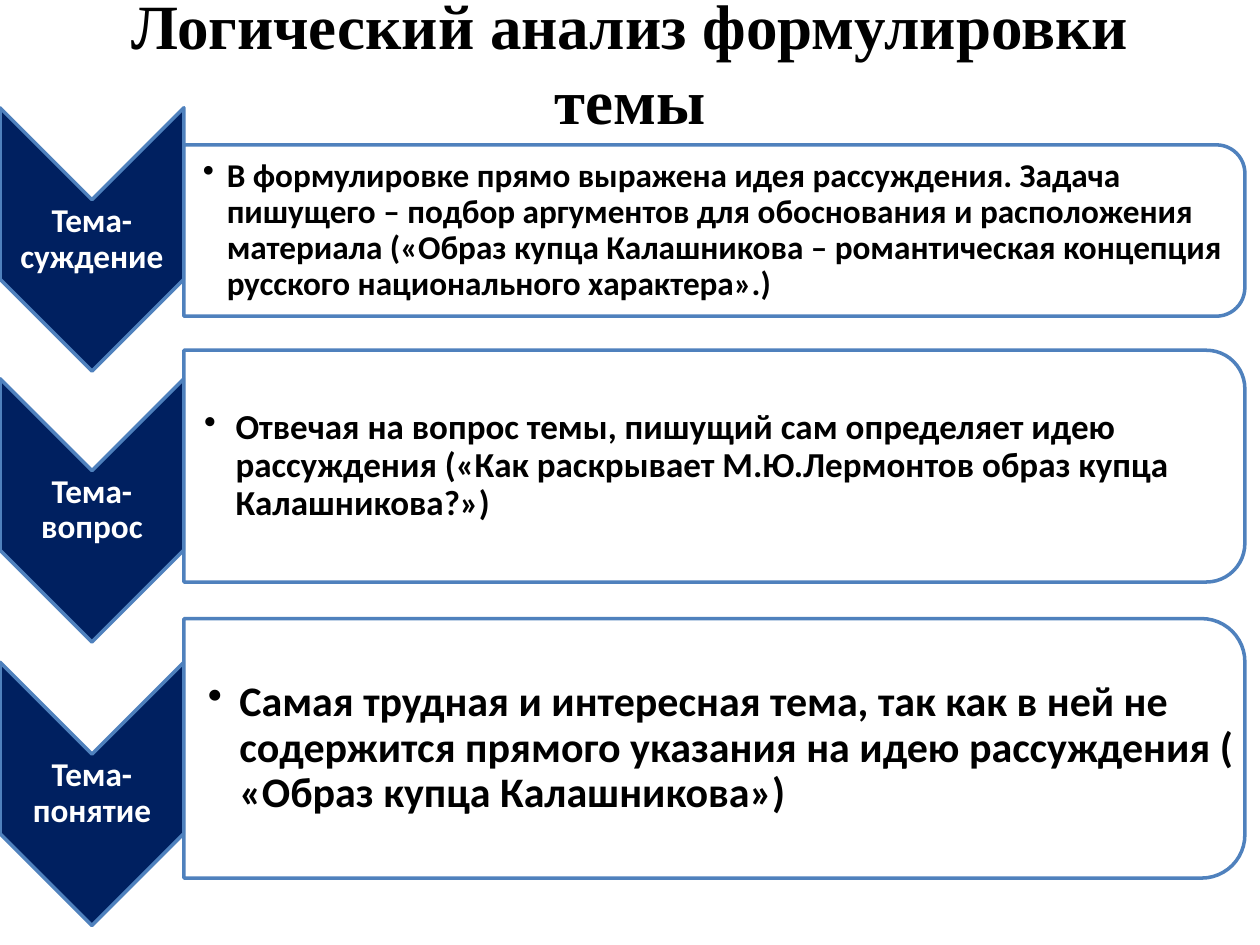
from lxml import etree
from pptx import Presentation
from pptx import util as u
from pptx.dml.color import RGBColor
from pptx.enum import shapes, text
from pptx.oxml.ns import qn

# Content: centres and sizes are in inches
TITLE = "Логический анализ формулировки темы"
TOPICS = [
    dict(label="Тема-суждение", chevron_y=1.9, panel_y=1.83, height=1.36, size=19,
         inset=0.15, hang=0.19,
         body="В формулировке прямо выражена идея рассуждения. Задача пишущего – подбор "
              "аргументов для обоснования и расположения материала («Образ купца "
              "Калашникова – романтическая концепция русского национального характера».)"),
    dict(label="Тема-вопрос", chevron_y=4.05, panel_y=3.7, height=1.84, size=20,
         inset=0.16, hang=0.25,
         body="Отвечая на вопрос темы, пишущий сам определяет идею рассуждения "
              "(«Как раскрывает М.Ю.Лермонтов образ купца Калашникова?»)"),
    dict(label="Тема-понятие", chevron_y=6.3, panel_y=5.94, height=2.06, size=24,
         inset=0.19, hang=0.25,
         body="Самая трудная и интересная тема, так как в ней не содержится прямого "
              "указания на идею рассуждения ( «Образ купца Калашникова»)"),
]
THEME = dict(navy="002060", blue="4F81BD", white="FFFFFF", black="000000",
             title_font="Times New Roman", body_font="Calibri",
             title_size=36, label_size=19, line=2, panel_opacity=90)

# Two columns: chevrons on the left, panels on the right
WIDTH, HEIGHT = 10, 7.5
COLUMN, PANEL_WIDTH = 1.46, 8.42
CHEVRON_LENGTH, LABEL_HEIGHT = 2.09, 0.63

presentation = Presentation()
presentation.slide_width, presentation.slide_height = u.Inches(WIDTH), u.Inches(HEIGHT)
slide = presentation.slides.add_slide(presentation.slide_layouts[6])


def add_text(content, left, center_y, width, height, size, color, font=THEME["body_font"],
             align=text.PP_ALIGN.CENTER, insets=(0.01,) * 4, spacing=0.9, hang=0):
    box = slide.shapes.add_textbox(*map(u.Inches, (left, center_y - height / 2, width, height)))
    frame = box.text_frame
    frame.word_wrap = True
    frame.vertical_anchor = text.MSO_ANCHOR.MIDDLE
    (frame.margin_left, frame.margin_top,
     frame.margin_right, frame.margin_bottom) = map(u.Inches, insets)
    paragraph = frame.paragraphs[0]
    paragraph.alignment, paragraph.line_spacing = align, spacing
    if hang:
        properties = paragraph._p.get_or_add_pPr()
        properties.set("marL", str(u.Inches(hang)))
        properties.set("indent", str(-u.Inches(hang)))
        etree.SubElement(properties, qn("a:buChar")).set("char", "•")
    run = paragraph.add_run()
    run.text = content
    run.font.name, run.font.size, run.font.bold = font, u.Pt(size), True
    run.font.color.rgb = RGBColor.from_string(color)


def add_turned(kind, left, center_y, width, height, fill, opacity=100):
    """Place a shape turned by 90 degrees so that it covers the given area."""
    center_x = left + width / 2
    shape = slide.shapes.add_shape(kind, *map(u.Inches, (
        center_x - height / 2, center_y - width / 2, height, width)))
    shape.rotation = 90
    shape.shadow.inherit = False
    shape.fill.solid()
    shape.fill.fore_color.rgb = RGBColor.from_string(fill)
    if opacity < 100:
        color = shape.fill._xPr.find(".//" + qn("a:srgbClr"))
        etree.SubElement(color, qn("a:alpha")).set("val", str(opacity * 1000))
    shape.line.color.rgb = RGBColor.from_string(THEME["blue"])
    shape.line.width = u.Pt(THEME["line"])


# Title
add_text(TITLE, WIDTH * 0.05, 0.49, WIDTH * 0.9, 0.71, THEME["title_size"], THEME["black"],
         font=THEME["title_font"], insets=(0.1, 0.05, 0.1, 0.05), spacing=1)

# One chevron and one panel for each topic
for topic in TOPICS:
    add_turned(shapes.MSO_SHAPE.CHEVRON, 0, topic["chevron_y"], COLUMN, CHEVRON_LENGTH,
               THEME["navy"])
    add_text(topic["label"], 0, topic["chevron_y"], COLUMN, LABEL_HEIGHT,
             THEME["label_size"], THEME["white"])
    add_turned(shapes.MSO_SHAPE.ROUND_2_SAME_RECTANGLE, COLUMN, topic["panel_y"], PANEL_WIDTH,
               topic["height"], THEME["white"], THEME["panel_opacity"])
    add_text(topic["body"], COLUMN, topic["panel_y"], PANEL_WIDTH - 0.08, topic["height"] * 0.9,
             topic["size"], THEME["black"], align=text.PP_ALIGN.LEFT,
             insets=(topic["inset"], 0.01, 0.01, 0.01), hang=topic["hang"])

presentation.save("out.pptx")
